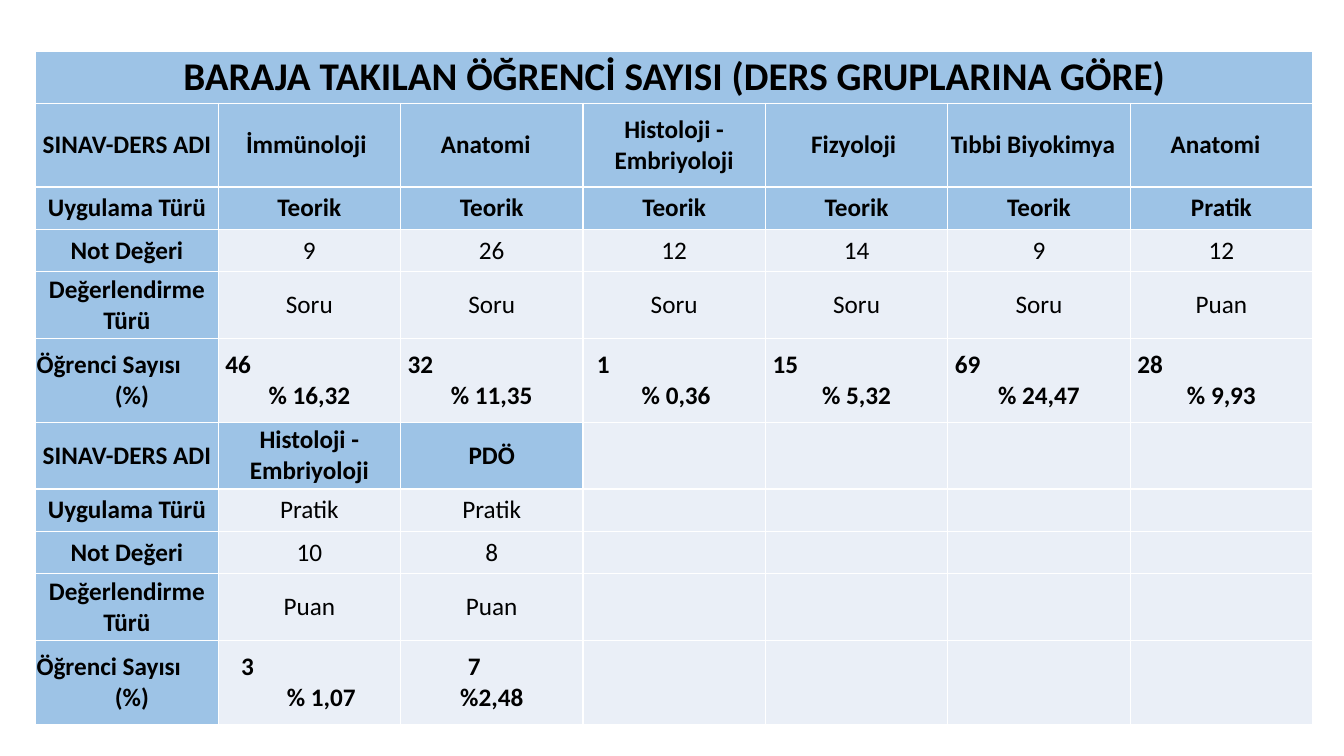
from dataclasses import dataclass

from lxml import etree
from pptx import Presentation
from pptx.dml.color import RGBColor
from pptx.enum.text import MSO_ANCHOR, PP_ALIGN
from pptx.oxml.ns import qn
from pptx.util import Cm, Pt

CENTER = PP_ALIGN.CENTER
LEFT = PP_ALIGN.LEFT
MIDDLE = MSO_ANCHOR.MIDDLE

FONT = "Calibri"
BLACK = "000000"
WHITE = "FFFFFF"
HEADER_BLUE = "9DC3E6"
BODY_BLUE = "EAEFF7"
BORDER_TAGS = ("a:lnL", "a:lnR", "a:lnT", "a:lnB")


@dataclass
class Line:
    """One line of cell text with its alignment and indents in centimetres."""

    text: str
    alignment: PP_ALIGN = CENTER
    left: float = 0
    right: float = 0


def count(number, share, indent=0.18, share_indent=0):
    """Return a student count above its centred percentage."""
    return [Line(number, LEFT, indent), Line(share, left=share_indent)]


TITLE = "BARAJA TAKILAN ÖĞRENCİ SAYISI (DERS GRUPLARINA GÖRE)"
LABELS = ["SINAV-DERS ADI", "Uygulama Türü", "Not Değeri", "Değerlendirme Türü",
          count("Öğrenci Sayısı", "(%)", 0.02, 0.25)]
ANATOMY = [Line("Anatomi", right=0.3)]
HISTOLOGY = "Histoloji - Embriyoloji"
FIRST_COURSES = [
    [[Line("İmmünoloji", right=0.15)], "Teorik", "9", "Soru", count("46", "% 16,32")],
    [ANATOMY, "Teorik", "26", "Soru", count("32", "% 11,35")],
    [HISTOLOGY, "Teorik", "12", "Soru", count("1", "% 0,36", 0.35, 0.1)],
    [[Line("Fizyoloji", right=0.15)], "Teorik", "14", "Soru", count("15", "% 5,32")],
    [[Line("Tıbbi Biyokimya", right=0.3)], "Teorik", "9", "Soru", count("69", "% 24,47")],
    [ANATOMY, "Pratik", "12", "Puan", count("28", "% 9,93")],
]
SECOND_COURSES = [
    [HISTOLOGY, "Pratik", "10", "Puan", count("3", "% 1,07", 0.58, 0.6)],
    ["PDÖ", "Pratik", "8", "Puan", count("7", "%2,48", 1.7)],
]
COLUMN_COUNT = 1 + len(FIRST_COURSES)
ROW_HEIGHTS = [1.3, 2.11, 1.07, 1.07, 1.68, 2.11, 1.68, 1.07, 1.07, 1.68, 2.11]
COUNT_ROWS = (5, 10)
SECOND_HEADER_ROW = 6


def color(value):
    """Turn a hex string into a colour."""
    return RGBColor.from_string(value)


def add_borders(cell):
    """Draw thin white borders around a cell."""
    properties = cell._tc.get_or_add_tcPr()
    for tag in BORDER_TAGS:
        border = etree.SubElement(properties, qn(tag), w=str(Pt(1)))
        fill = etree.SubElement(border, qn("a:solidFill"))
        etree.SubElement(fill, qn("a:srgbClr"), val=WHITE)


def style_cell(cell, background):
    """Set the borders, fill, margins and anchor of a cell."""
    add_borders(cell)
    cell.fill.solid()
    cell.fill.fore_color.rgb = color(background)
    cell.margin_left = cell.margin_right = cell.margin_top = cell.margin_bottom = 0
    cell.vertical_anchor = MIDDLE


def write_cell(cell, content, size, bold):
    """Write a plain string or a list of lines into a cell."""
    lines = [Line(content)] if isinstance(content, str) else content
    frame = cell.text_frame
    for index, line in enumerate(lines):
        paragraph = frame.add_paragraph() if index else frame.paragraphs[0]
        paragraph.text = line.text
        paragraph.alignment = line.alignment
        properties = paragraph._p.get_or_add_pPr()
        properties.set("marL", str(Cm(line.left)))
        properties.set("marR", str(Cm(line.right)))
        paragraph.font.name = FONT
        paragraph.font.size = Pt(size)
        paragraph.font.bold = bold
        paragraph.font.color.rgb = color(BLACK)


def is_header(row, column):
    """Tell whether a cell belongs to the darker headings."""
    return column == 0 or row < 3 or (row == SECOND_HEADER_ROW and column <= len(SECOND_COURSES))


def add_results_table(slide, left, top, width):
    """Add the table of students below the threshold in the given box."""
    frame = slide.shapes.add_table(len(ROW_HEIGHTS), COLUMN_COUNT, Cm(left), Cm(top),
                                   Cm(width), Cm(sum(ROW_HEIGHTS)))
    table = frame.table
    table.first_row = table.horz_banding = False
    for column in table.columns:
        column.width = Cm(width / COLUMN_COUNT)
    for row, height in zip(table.rows, ROW_HEIGHTS):
        row.height = Cm(height)

    contents = [[TITLE]]
    for courses in (FIRST_COURSES, SECOND_COURSES):
        contents += zip(LABELS, *courses)
    for row, values in enumerate(contents):
        for column in range(COLUMN_COUNT):
            cell = table.cell(row, column)
            header = is_header(row, column)
            style_cell(cell, HEADER_BLUE if header else BODY_BLUE)
            if column < len(values):
                write_cell(cell, values[column], 18 if row else 28, header or row in COUNT_ROWS)
    table.cell(0, 0).merge(table.cell(0, COLUMN_COUNT - 1))


def main():
    """Build and save the presentation."""
    presentation = Presentation()
    presentation.slide_width = Cm(33.87)
    presentation.slide_height = Cm(19.05)
    slide = presentation.slides.add_slide(presentation.slide_layouts[6])
    add_results_table(slide, 0.9, 1.3, 32.18)
    presentation.save("out.pptx")


if __name__ == "__main__":
    main()
